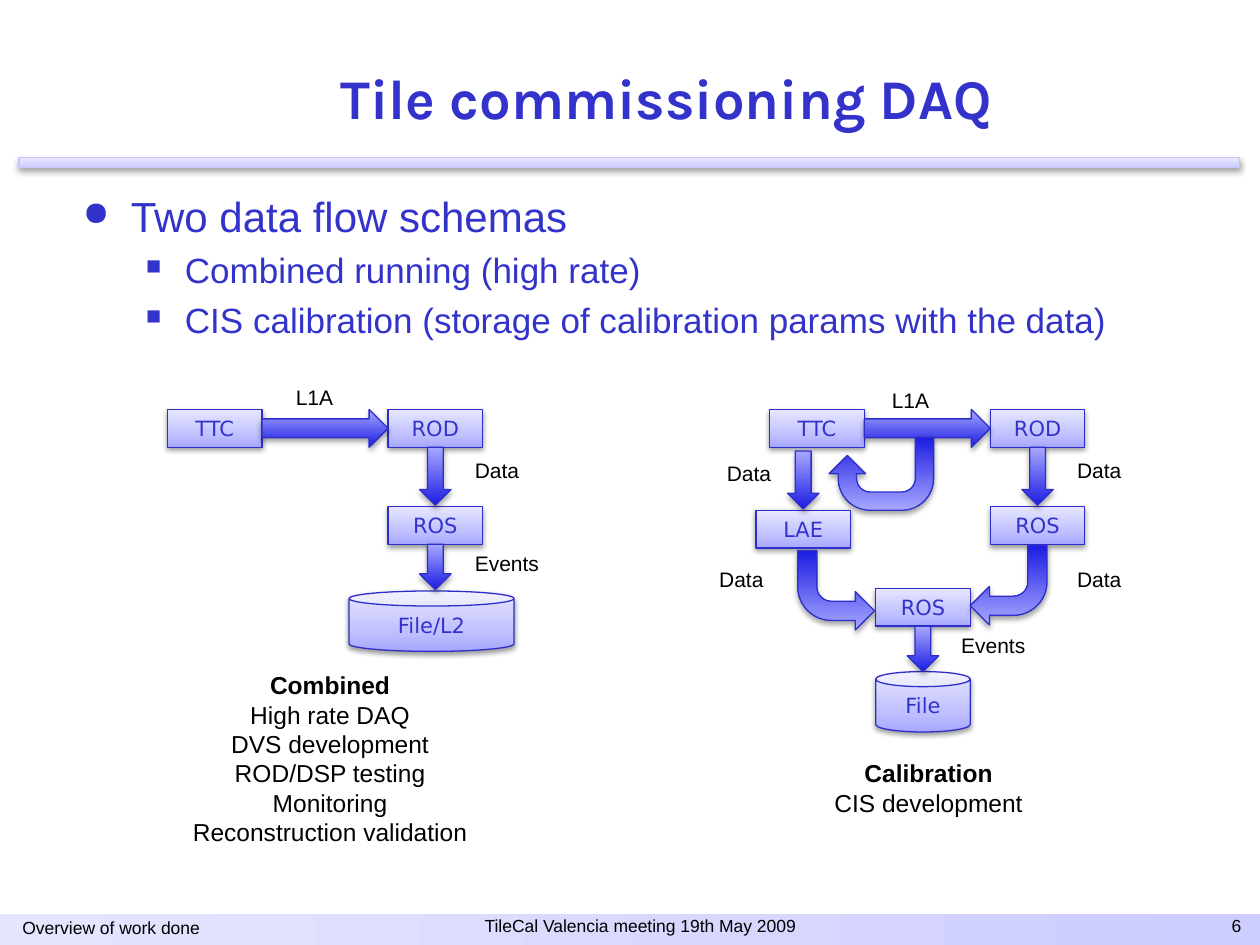
"""Build the slide on the two data flow schemas of the Tile commissioning DAQ."""
from copy import deepcopy
from dataclasses import dataclass

from lxml import etree
from pptx import Presentation
from pptx.dml.color import RGBColor
from pptx.enum.shapes import MSO_SHAPE
from pptx.enum.text import MSO_ANCHOR, PP_ALIGN
from pptx.oxml import parse_xml
from pptx.oxml.ns import qn
from pptx.util import Inches, Pt

RECTANGLE, CAN = MSO_SHAPE.RECTANGLE, MSO_SHAPE.CAN
RIGHT_ARROW, DOWN_ARROW = MSO_SHAPE.RIGHT_ARROW, MSO_SHAPE.DOWN_ARROW
BENT_ARROW, U_TURN_ARROW = MSO_SHAPE.BENT_ARROW, MSO_SHAPE.U_TURN_ARROW
LEFT, CENTER, RIGHT = PP_ALIGN.LEFT, PP_ALIGN.CENTER, PP_ALIGN.RIGHT
MIDDLE = MSO_ANCHOR.MIDDLE

BLUE = RGBColor(0x33, 0x33, 0xCC)
OUTLINE = RGBColor(0x2E, 0x2E, 0xCB)
BLACK = RGBColor(0, 0, 0)
RULE_LINE = RGBColor(0xC6, 0xC6, 0xFB)
PALE = RGBColor(0xE7, 0xE7, 0xFF)
LIGHT = RGBColor(0xA7, 0xA7, 0xFF)
RULE_STOPS = [(0, RGBColor(0xCC, 0xCC, 0xFF)), (1, PALE)]
FOOTER_STOPS = [(0, RGBColor(0xE5, 0xE5, 0xFF)), (1, RGBColor(0xCD, 0xCD, 0xFF))]
NODE_STOPS = [(0, LIGHT), (0.35, RGBColor(0xC1, 0xC1, 0xFF)), (1, PALE)]
ARROW_STOPS = [(0, RGBColor(0x1C, 0x1C, 0xE3)), (1, LIGHT)]

BODY_FONT, NODE_FONT, TITLE_FONT = "Arial", "DejaVu Sans", "Karla"
NODE_WIDTH, NODE_HEIGHT, CAN_HEIGHT = 0.75, 0.3, 0.48
DRAWING = "http://schemas.openxmlformats.org/drawingml/2006/main"


@dataclass
class Node:
    text: str
    left: float
    top: float
    kind: int = RECTANGLE
    width: float = NODE_WIDTH
    height: float = NODE_HEIGHT


@dataclass
class Arrow:
    kind: int
    left: float
    top: float
    width: float
    height: float
    rotation: float = 0
    mirrored: bool = False


@dataclass
class Label:
    text: str
    left: float
    top: float
    width: float = 0.56


@dataclass
class Bullet:
    text: str
    size: float
    symbol: str
    symbol_percent: int
    margin: float
    hanging: float
    line_spacing: float
    space_before: float


def set_gradient(shape, stops: list, angle: float) -> None:
    """Fill a shape with a linear gradient."""
    shape.fill.gradient()
    shape.fill.gradient_angle = angle
    stop_list = shape.fill._fill._gradFill.find(qn("a:gsLst"))
    while len(stop_list) < len(stops):
        stop_list.append(deepcopy(stop_list[-1]))
    for stop, (position, color) in zip(shape.fill.gradient_stops, stops):
        stop.position = position
        stop.color.rgb = color


def add_shadow(shape, opacity: int, distance: float) -> None:
    """Cast a soft shadow straight down."""
    shape.shadow.inherit = False
    effects = shape._element.spPr.find(qn("a:effectLst"))
    effects.append(parse_xml(
        f'<a:outerShdw xmlns:a="{DRAWING}" blurRad="{Pt(3.1)}" dist="{Pt(distance)}" '
        f'dir="5400000" rotWithShape="0"><a:srgbClr val="000000">'
        f'<a:alpha val="{opacity * 1000}"/></a:srgbClr></a:outerShdw>'))


def add_span(para, text: str, size: float, font=BODY_FONT, color=BLACK, bold=False) -> None:
    """Add one formatted run to a paragraph."""
    span = para.add_run()
    span.text = text
    span.font.size, span.font.name, span.font.bold = Pt(size), font, bold
    span.font.color.rgb = color


def add_filled(shapes, kind, place: tuple, stops: list, line, angle=90):
    """Add a preset shape with a gradient and a thin outline."""
    shape = shapes.add_shape(kind, *map(Inches, place))
    set_gradient(shape, stops, angle)
    shape.shadow.inherit = False
    if line is None:
        shape.line.fill.background()
    else:
        shape.line.color.rgb = line
        shape.line.width = Pt(0.75)
    return shape


def add_text(shapes, place: tuple, lines: list, size: float, align=LEFT, wrap=True,
             heading=False) -> None:
    """Add a black text box with one paragraph per line."""
    frame = shapes.add_textbox(*map(Inches, place)).text_frame
    frame.word_wrap = wrap
    for index, line in enumerate(lines):
        para = frame.paragraphs[0] if index == 0 else frame.add_paragraph()
        para.alignment = align
        add_span(para, line, size, bold=heading and index == 0)


def add_node(shapes, node: Node) -> None:
    """Draw a labelled box or storage can."""
    place = (node.left, node.top, node.width, node.height)
    box = add_filled(shapes, node.kind, place, NODE_STOPS, OUTLINE)
    add_shadow(box, 38, 1.6)
    box.text_frame.vertical_anchor = MIDDLE
    para = box.text_frame.paragraphs[0]
    para.alignment = CENTER
    add_span(para, node.text, 12, NODE_FONT, BLUE)


def add_arrow(shapes, arrow: Arrow) -> None:
    """Draw a block arrow."""
    place = (arrow.left, arrow.top, arrow.width, arrow.height)
    shape = add_filled(shapes, arrow.kind, place, ARROW_STOPS, OUTLINE)
    add_shadow(shape, 35, 1.8)
    shape.rotation = arrow.rotation
    if arrow.mirrored:
        shape._element.spPr.find(qn("a:xfrm")).set("flipH", "1")


def add_schema(page, left: float, nodes: list, arrows: list, labels: list) -> None:
    """Draw the shared readout chain from a left edge, then a schema's own parts."""
    shapes = page.shapes.add_group_shape().shapes
    readout = left + 1.75
    chain = [Node("TTC", left, 3.25), Node("ROS", readout, 4.02), Node("ROD", readout, 3.25)]
    links = [Arrow(RIGHT_ARROW, left + NODE_WIDTH, 3.25, 1, 0.3),
             Arrow(DOWN_ARROW, readout + 0.25, 3.55, 0.25, 0.46)]
    for node in chain + nodes:
        add_node(shapes, node)
    for arrow in links + arrows:
        add_arrow(shapes, arrow)
    for label in [Label("Data", left + 2.34, 3.58)] + labels:
        add_text(shapes, (label.left, label.top, label.width, 0.3), [label.text], 12, wrap=False)


def add_bullets(page, bullets: list) -> None:
    """Add the bulleted body text."""
    frame = page.shapes.add_textbox(*map(Inches, (0.56, 1.42, 8.87, 1.4))).text_frame
    frame.word_wrap = True
    for index, bullet in enumerate(bullets):
        para = frame.paragraphs[0] if index == 0 else frame.add_paragraph()
        properties = para._p.get_or_add_pPr()
        properties.set("marL", str(Inches(bullet.margin)))
        properties.set("indent", str(-Inches(bullet.hanging)))
        color = etree.SubElement(properties, qn("a:buClr"))
        etree.SubElement(color, qn("a:srgbClr"), val=str(BLUE))
        etree.SubElement(properties, qn("a:buSzPct"), val=str(bullet.symbol_percent * 1000))
        etree.SubElement(properties, qn("a:buChar"), char=bullet.symbol)
        para.line_spacing = bullet.line_spacing
        para.space_before = Pt(bullet.space_before)
        add_span(para, bullet.text, bullet.size, color=BLUE)


def main() -> None:
    """Build and save the deck."""
    deck = Presentation()
    deck.slide_width, deck.slide_height = Inches(10), Inches(7.5)
    page = deck.slides.add_slide(deck.slide_layouts[5])

    add_filled(page.shapes, RECTANGLE, (0, 7.25, 10, 0.25), FOOTER_STOPS, None, angle=0)
    rule = add_filled(page.shapes, RECTANGLE, (0.15, 1.25, 9.69, 0.08), RULE_STOPS, RULE_LINE)
    add_shadow(rule, 35, 1.8)

    title = page.shapes.title
    title.left, title.top, title.width, title.height = map(Inches, (1.8, 0.36, 6.98, 0.83))
    title.text_frame.vertical_anchor = MIDDLE
    title.text_frame.paragraphs[0].alignment = CENTER
    add_span(title.text_frame.paragraphs[0], "Tile commissioning DAQ", 32, TITLE_FONT, BLUE, True)

    second_level = (20, "■", 60, 0.81, 0.31, 1, 4.6)
    add_bullets(page, [
        Bullet("Two data flow schemas", 24, "●", 80, 0.38, 0.38, 1.1, 0),
        Bullet("Combined running (high rate)", *second_level),
        Bullet("CIS calibration (storage of calibration params with the data)", *second_level)])

    add_text(page.shapes, (2.77, 7.21, 4.62, 0.29), ["TileCal Valencia meeting 19th May 2009"], 10, CENTER)
    add_text(page.shapes, (7.54, 7.21, 2.41, 0.29), ["6"], 10, RIGHT)
    add_text(page.shapes, (0.08, 7.23, 2.54, 0.27), ["Overview of work done"], 10)

    add_schema(
        page, 1.33,
        [Node("File/L2", 2.77, 4.69, CAN, 1.31, CAN_HEIGHT)],
        [Arrow(DOWN_ARROW, 3.33, 4.32, 0.25, 0.36)],
        [Label("L1A", 2.25, 3, 0.5), Label("Events", 3.67, 4.32, 0.72)])
    add_schema(
        page, 6.11,
        [Node("LAE", 6, 4.05), Node("ROS", 6.95, 4.67),
         Node("File", 6.95, 5.33, CAN, height=CAN_HEIGHT)],
        [Arrow(DOWN_ARROW, 6.25, 3.58, 0.25, 0.46),
         Arrow(U_TURN_ARROW, 6.58, 3.47, 0.83, 0.58, 180),
         Arrow(DOWN_ARROW, 7.2, 4.97, 0.25, 0.36),
         Arrow(BENT_ARROW, 7.7, 4.33, 0.61, 0.63, 180),
         Arrow(BENT_ARROW, 6.33, 4.37, 0.61, 0.63, 180, True)],
        [Label("L1A", 6.98, 3.03, 0.5), Label("Data", 8.45, 4.45), Label("Data", 5.67, 3.61),
         Label("Data", 5.61, 4.45), Label("Events", 7.53, 4.97, 0.72)])

    add_text(page.shapes, (1.42, 5.27, 2.4, 1.75),
             ["Combined", "High rate DAQ", "DVS development", "ROD/DSP testing", "Monitoring",
              "Reconstruction validation"], 14, CENTER, False, True)
    add_text(page.shapes, (6.49, 5.97, 1.76, 0.81), ["Calibration", "CIS development"],
             14, CENTER, False, True)
    deck.save("out.pptx")


if __name__ == "__main__":
    main()
